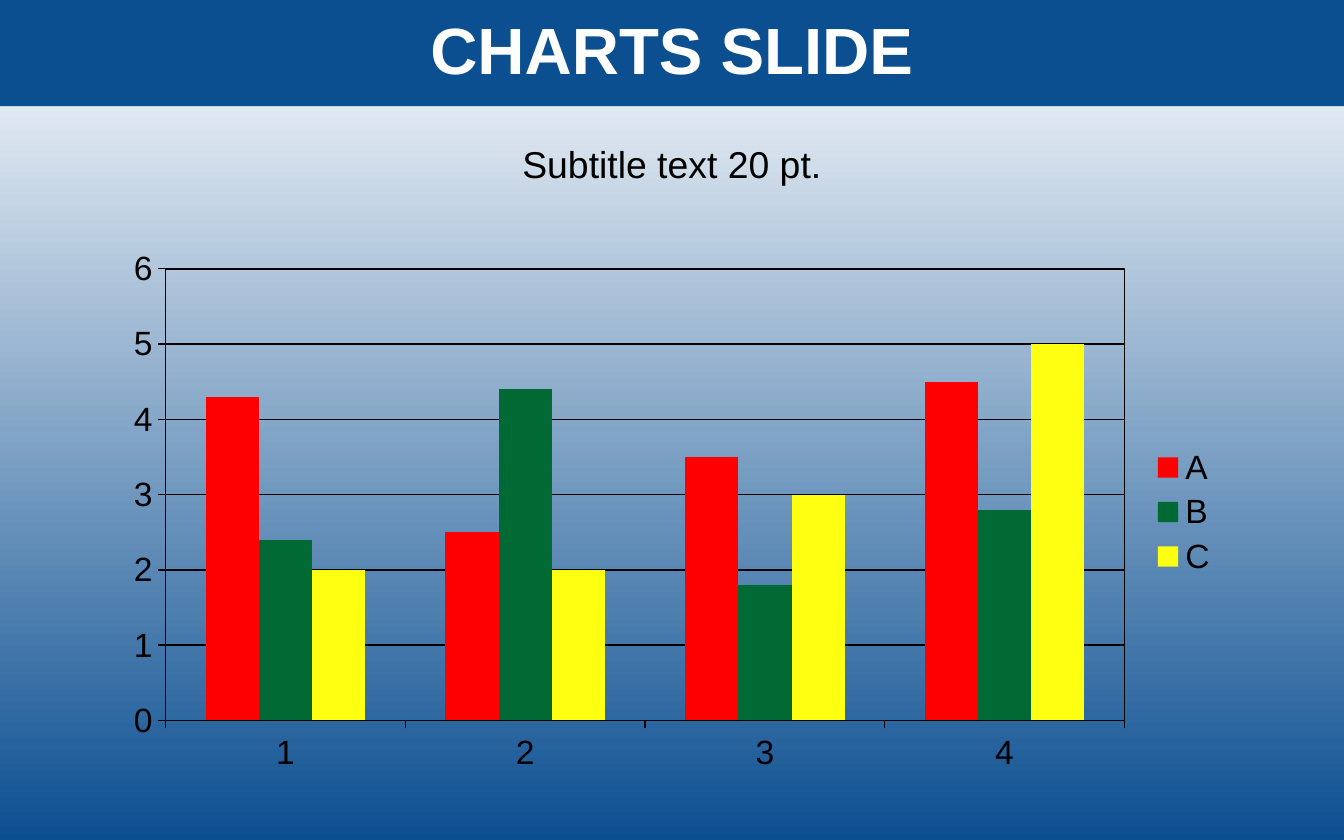
from lxml import etree
from pptx import Presentation
from pptx import util as u
from pptx.chart.data import CategoryChartData
from pptx.dml.color import RGBColor
from pptx.enum import chart as charts, shapes, text
from pptx.oxml import parse_xml
from pptx.oxml.ns import nsdecls, qn

COLORS = {"navy": "0C4F91", "white": "FFFFFF", "black": "000000",
          "A": "FF0000", "B": "006934", "C": "FFFF11"}
FONT = "Arial"
VALUES = {"A": (4.3, 2.5, 3.5, 4.5),
          "B": (2.4, 4.4, 1.8, 2.8),
          "C": (2, 2, 3, 5)}


def rgb(name):
    return RGBColor.from_string(COLORS[name])


def write(box, words, size, color, bold=False, before=0, inset=0.05):
    frame = box.text_frame
    frame.word_wrap = True
    frame.vertical_anchor = text.MSO_ANCHOR.MIDDLE
    frame.margin_left = frame.margin_right = u.Inches(inset)
    frame.margin_top = frame.margin_bottom = u.Inches(0.05)
    para = frame.paragraphs[0]
    para.alignment = text.PP_ALIGN.CENTER
    para.line_spacing = 0.9
    para.space_before = u.Pt(before)
    span = para.add_run()
    span.text = words
    span.font.name, span.font.size, span.font.bold = FONT, u.Pt(size), bold
    span.font.color.rgb = rgb(color)


deck = Presentation()
deck.slide_width, deck.slide_height = u.Inches(10), u.Inches(6.25)
width, height = deck.slide_width, deck.slide_height
page = deck.slides.add_slide(deck.slide_layouts[6])

# Background: white at the top, navy at the bottom
backdrop = page.background.fill
backdrop.gradient()
backdrop.gradient_angle = 270
for stop, color in zip(backdrop.gradient_stops, ("white", "navy")):
    stop.color.rgb = rgb(color)

# Title band and subtitle
band = page.shapes.add_shape(shapes.MSO_SHAPE.RECTANGLE, 0, 0, width, u.Inches(0.79))
band.shadow.inherit = False
band.fill.solid()
band.fill.fore_color.rgb = rgb("navy")
band.line.fill.background()
write(band, "CHARTS SLIDE", 35, "white", bold=True)

subtitle_width = u.Inches(9.45)
subtitle = page.shapes.add_textbox((width - subtitle_width) // 2, int(height * 0.16),
                                   subtitle_width, int(height * 0.075))
write(subtitle, "Subtitle text 20 pt.", 20, "black", before=10, inset=0.1)

# Column chart, centred across the slide
data = CategoryChartData()
data.categories = ["1", "2", "3", "4"]
for name, values in VALUES.items():
    data.add_series(name, values)
chart = page.shapes.add_chart(charts.XL_CHART_TYPE.COLUMN_CLUSTERED,
                              width // 12, u.Inches(1.79),
                              width * 10 // 12, u.Inches(4.04), data).chart
chart.has_title = False
chart.font.name, chart.font.size = FONT, u.Pt(18)
chart.font.color.rgb = rgb("black")
chart.has_legend = True
chart.legend.position = charts.XL_LEGEND_POSITION.RIGHT
chart.legend.include_in_layout = False

plot = chart.plots[0]
plot.gap_width, plot.overlap = 150, 0
plot.vary_by_categories = False
for series in plot.series:
    series.invert_if_negative = False
    series.format.fill.solid()
    series.format.fill.fore_color.rgb = rgb(series.name)

value_axis = chart.value_axis
value_axis.minimum_scale, value_axis.maximum_scale, value_axis.major_unit = 0, 6, 1
value_axis.has_major_gridlines = True
for axis in (chart.category_axis, value_axis):
    axis.major_tick_mark = charts.XL_TICK_MARK.OUTSIDE
    axis.minor_tick_mark = charts.XL_TICK_MARK.NONE
for part in (chart.category_axis, value_axis, value_axis.major_gridlines):
    part.format.line.color.rgb = rgb("black")
    part.format.line.width = u.Pt(0.75)

# Place the inner plot area by shares of the chart and give it a border
area = plot._element.getparent()
for old in area.findall(qn("c:layout")):
    area.remove(old)
layout = parse_xml(f'<c:layout {nsdecls("c")}><c:manualLayout/></c:layout>')
for tag, value in (("layoutTarget", "inner"), ("xMode", "edge"), ("yMode", "edge"),
                   ("x", "0.048"), ("y", "0.052"), ("w", "0.856"), ("h", "0.832")):
    etree.SubElement(layout[0], qn(f"c:{tag}")).set("val", value)
area.insert(0, layout)
area.append(parse_xml(
    f'<c:spPr {nsdecls("c", "a")}><a:noFill/><a:ln w="{u.Pt(0.75)}"><a:solidFill>'
    f'<a:srgbClr val="{COLORS["black"]}"/></a:solidFill></a:ln></c:spPr>'))

deck.save("out.pptx")
